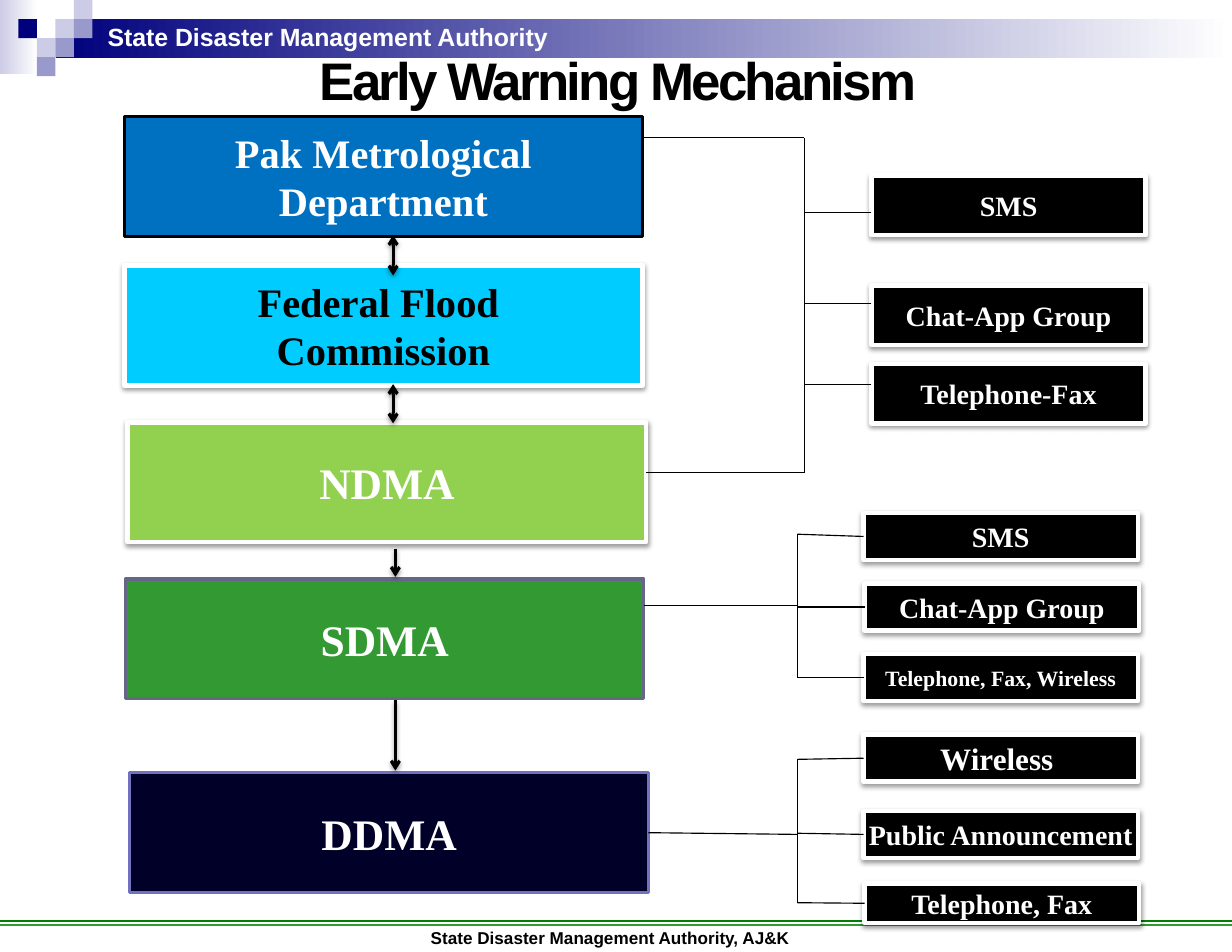
from lxml.etree import SubElement
from pptx import Presentation
from pptx.dml.color import RGBColor
from pptx.enum.shapes import MSO_CONNECTOR as LINK, MSO_SHAPE as SHAPE
from pptx.enum.text import MSO_ANCHOR as ANCHOR, PP_ALIGN as ALIGN
from pptx.oxml.ns import qn
from pptx.util import Inches, Pt

COLOURS = {
    "black": "000000", "white": "FFFFFF", "navy": "00007D", "lilac": "CCCCE6",
    "violet": "9999CC", "green": "339933", "dark_green": "008000",
    "blue": "0070C0", "cyan": "00CCFF", "lime": "92D050", "midnight": "000029",
    "slate": "666689", "periwinkle": "7171BD",
}
SERIF, SANS = "Times New Roman", "Arial"
WIDTH, HEIGHT = 11, 8.5
CELL_W, CELL_H = 0.165, 0.17  # grid of the corner squares
BOX_W, BOX_H = 4.63, 1.07
CHANNEL_W = 2.45
BOX_INSETS = (0.03, 0.01)

# Column and row on the corner grid, colour
SQUARES = [(3, 1, "lilac"), (4, 0, "lilac"), (4, 1, "violet"), (2, 2, "lilac"),
           (1, 1, "navy"), (3, 2, "violet"), (2, 3, "violet")]

# Lines, left, top, fill, outline, outline width, text colour, size
AGENCIES = [
    (["Pak Metrological Department"], 1.11, 1.04, "blue", "black", 2, "white", 26),
    (["Federal Flood ", "Commission"], 1.11, 2.37, "cyan", "white", 3, "black", 26),
    (["NDMA"], 1.14, 3.77, "lime", "white", 3, "white", 28),
    (["SDMA"], 1.12, 5.17, "green", "slate", 2, "white", 28),
    (["DDMA"], 1.16, 6.9, "midnight", "periwinkle", 2, "white", 28),
]

# x, top, bottom, whether the arrow points both ways
ARROWS = [(3.51, 2.1, 2.46, True), (3.51, 3.43, 3.78, True),
          (3.53, 4.9, 5.15, False), (3.53, 6.25, 6.88, False)]

# Spine (x, top, bottom), feeds (agency index, y),
# channels (text, left, top, height, size, branch y)
GROUPS = [
    ((7.18, 1.23, 4.22), [(0, 1.23), (2, 4.22)],
     [("SMS", 7.78, 1.57, 0.53, 18, 1.9),
      ("Chat-App Group", 7.78, 2.55, 0.53, 18, 2.71),
      ("Telephone-Fax", 7.78, 3.25, 0.53, 18, 3.43)]),
    ((7.12, 4.77, 6.05), [(3, 5.41)],
     [("SMS", 7.71, 4.58, 0.42, 18, 4.77),
      ("Chat-App Group", 7.72, 5.21, 0.42, 18, 5.42),
      ("Telephone, Fax, Wireless", 7.71, 5.84, 0.42, 14, 6.05)]),
    ((7.12, 6.78, 8.06), [(4, 7.45)],
     [("Wireless ", 7.71, 6.56, 0.42, 20, 6.78),
      ("Public Announcement ", 7.71, 7.24, 0.42, 18, 7.44),
      ("Telephone, Fax", 7.72, 7.89, 0.35, 18, 8.06)]),
]


def colour(name):
    return RGBColor.from_string(COLOURS[name])


def set_effects(item, shadow):
    """Replace the theme's shadow by a soft one, or by none."""
    effects = SubElement(item._element.spPr, qn("a:effectLst"))
    if shadow:
        outer = SubElement(effects, qn("a:outerShdw"), blurRad=str(Pt(3.1)),
                           dist=str(Pt(1.6)), dir="5400000", rotWithShape="0")
        tone = SubElement(outer, qn("a:srgbClr"), val=COLOURS["black"])
        SubElement(tone, qn("a:alpha"), val="38000")


def write(box, lines, font, size, tone, insets, align=ALIGN.CENTER,
          anchor=ANCHOR.TOP, wrap=True):
    frame = box.text_frame
    across, down = (Inches(inset) for inset in insets)
    layout = {"word_wrap": wrap, "vertical_anchor": anchor,
              "margin_left": across, "margin_right": across,
              "margin_top": down, "margin_bottom": down}
    for name, value in layout.items():
        setattr(frame, name, value)
    for index, line in enumerate(lines):
        para = frame.add_paragraph() if index else frame.paragraphs[0]
        para.alignment = align
        span = para.add_run()
        span.text = line
        for name, value in {"name": font, "size": Pt(size), "bold": True}.items():
            setattr(span.font, name, value)
        span.font.color.rgb = colour(tone)
    return frame


def add_rect(page, left, top, width, height, fill, outline=None, weight=0,
             shadow=False):
    box = page.shapes.add_shape(SHAPE.RECTANGLE, *map(Inches, (left, top, width, height)))
    if isinstance(fill, tuple):
        box.fill.gradient()
        box.fill.gradient_angle = 0
        for stop, name in zip(box.fill.gradient_stops, fill):
            stop.color.rgb = colour(name)
    else:
        box.fill.solid()
        box.fill.fore_color.rgb = colour(fill)
    if outline:
        box.line.color.rgb = colour(outline)
        box.line.width = Pt(weight)
    else:
        box.line.fill.background()
    set_effects(box, shadow)
    return box


def add_line(page, start, end, tone="black", weight=0.75, heads=(), shadow=False):
    line = page.shapes.add_connector(LINK.STRAIGHT, *map(Inches, (*start, *end)))
    line.line.color.rgb = colour(tone)
    line.line.width = Pt(weight)
    for head in heads:
        SubElement(line.line._get_or_add_ln(), qn(f"a:{head}"), type="arrow")
    set_effects(line, shadow)
    return line


def add_label(page, area, text, size, tone, **options):
    box = page.shapes.add_textbox(*map(Inches, area))
    write(box, [text], SANS, size, tone, (0.11, 0.06), **options)


def add_frame(page):
    # Header band and corner squares
    add_rect(page, 0, 0, 0.34, 0.66, ("lilac", "white"))
    add_rect(page, 0.5, 0.17, WIDTH - 0.5, 0.35, ("navy", "white"))
    for column, row, tone in SQUARES:
        add_rect(page, column * CELL_W, row * CELL_H, CELL_W, CELL_H, tone)
    add_label(page, (0.85, 0.13, 4.18, 0.38), "State Disaster Management Authority",
              16, "white", align=ALIGN.LEFT, wrap=False)
    # Footer rules
    for y, tone in ((8.22, "dark_green"), (8.26, "green")):
        add_line(page, (0, y), (WIDTH, y), tone, 1.25)
    add_label(page, (2.83, 8.22, 5.28, 0.31),
              "State Disaster Management Authority, AJ&K ", 11, "black")


def add_title(page):
    title = page.shapes.title
    area = {"left": 0.48, "top": 0.49, "width": 10.08, "height": 0.51}
    for name, value in area.items():
        setattr(title, name, Inches(value))
    frame = write(title, ["Early Warning Mechanism"], SANS, 34, "black", (0, 0))
    para = frame.paragraphs[0]
    para.line_spacing = 0.9
    para.runs[0].font._element.set("spc", "-170")


def add_agency(page, lines, left, top, fill, outline, weight, tone, size):
    box = add_rect(page, left, top, BOX_W, BOX_H, fill, outline, weight,
                   shadow=outline == "white")
    write(box, lines, SERIF, size, tone, BOX_INSETS, anchor=ANCHOR.MIDDLE)
    return box


def at_middle(box, y):
    return abs(box.top + box.height / 2 - Inches(y)) < Inches(0.03)


def add_group(page, agencies, spine, feeds, channels):
    x, top, bottom = spine
    add_line(page, (x, top), (x, bottom))
    for index, y in feeds:
        agency = agencies[index]
        edge = (agency.left + agency.width) / Inches(1)
        feed = add_line(page, (x, y), (edge, y))
        if at_middle(agency, y):
            feed.end_connect(agency, 3)
    for text, left, box_top, height, size, y in channels:
        box = add_rect(page, left, box_top, CHANNEL_W, height, "black", "white", 3, True)
        write(box, [text], SERIF, size, "white", BOX_INSETS, anchor=ANCHOR.MIDDLE)
        branch = add_line(page, (left, y), (x, y))
        if at_middle(box, y):
            branch.begin_connect(box, 1)


def main():
    deck = Presentation()
    deck.slide_width, deck.slide_height = Inches(WIDTH), Inches(HEIGHT)
    page = deck.slides.add_slide(deck.slide_layouts[5])
    add_frame(page)
    add_title(page)
    agencies = [add_agency(page, *agency) for agency in AGENCIES]
    for group in GROUPS:
        add_group(page, agencies, *group)
    # Arrows down the chain of agencies
    for x, top, bottom, both in ARROWS:
        heads = ("headEnd", "tailEnd") if both else ("tailEnd",)
        add_line(page, (x, top), (x, bottom), weight=2, heads=heads, shadow=True)
    deck.save("out.pptx")


if __name__ == "__main__":
    main()
